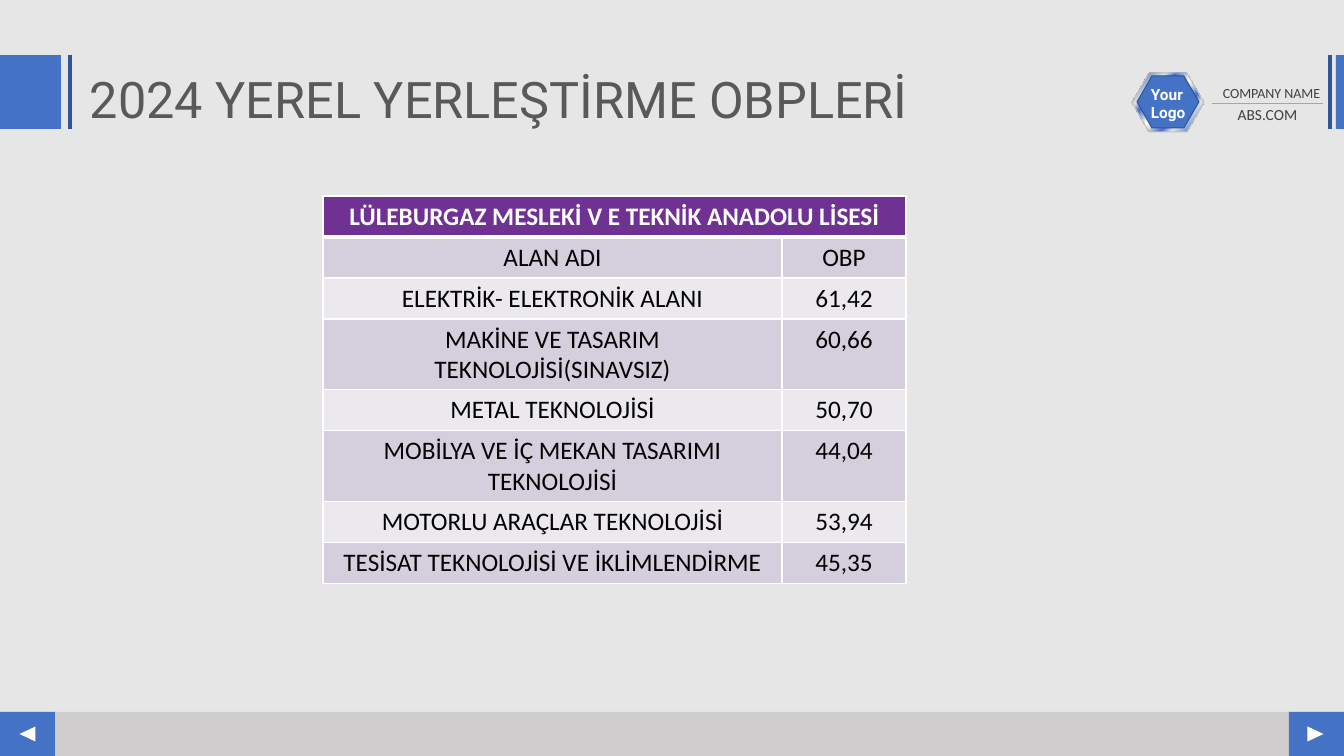
"""Build the slide listing the 2024 local placement OBP scores."""
import lxml.etree
import pptx
import pptx.dml.color
import pptx.enum.shapes
import pptx.enum.text
import pptx.oxml
import pptx.oxml.ns
import pptx.util

PX = 12192000 / 1344
BLUE, NAVY, WHITE, SILVER = "4472C4", "2F5597", "FFFFFF", "E6E6E6"
SHAPE = pptx.enum.shapes.MSO_SHAPE
ALIGN = pptx.enum.text.PP_ALIGN
FIT = pptx.enum.text.MSO_AUTO_SIZE
color = pptx.dml.color.RGBColor.from_string
qn = pptx.oxml.ns.qn

deck = pptx.Presentation()
deck.slide_width = round(1344 * PX)
deck.slide_height = round(756 * PX)
page = deck.slides.add_slide(deck.slide_layouts[6])
page.background.fill.solid()
page.background.fill.fore_color.rgb = color("E7E6E6")


def emu(*lengths):
    return [round(length * PX) for length in lengths]


def write(para, text, font, size, ink, bold=False):
    span = para.add_run()
    span.text = text
    span.font.name = font
    span.font.size = pptx.util.Pt(size)
    span.font.bold = bold
    span.font.color.rgb = color(ink)


for kind, bounds, fill, outline, turn in [
    (SHAPE.RECTANGLE, (0, 712, 1344, 44), "D0CECE", None, 0),
    (SHAPE.RECTANGLE, (1289, 712, 55, 44), BLUE, None, 0),
    (SHAPE.RECTANGLE, (0, 712, 55, 44), BLUE, None, 0),
    (SHAPE.ISOSCELES_TRIANGLE, (1308, 726, 15, 16), WHITE, None, 90),
    (SHAPE.ISOSCELES_TRIANGLE, (20, 726, 15, 16), WHITE, None, 270),
    (SHAPE.RECTANGLE, (1336, 55, 8, 74), BLUE, None, 0),
    (SHAPE.RECTANGLE, (0, 55, 61, 74), BLUE, None, 0),
    (SHAPE.HEXAGON, (1132, 73, 72, 59), None, "C0C0C0", 0),
    (SHAPE.HEXAGON, (1137, 76, 62, 52), BLUE, NAVY, 0),
]:
    shape = page.shapes.add_shape(kind, *emu(*bounds))
    shape.shadow.inherit = False
    shape.rotation = turn
    if kind == SHAPE.HEXAGON:
        shape.adjustments[0] = 0.29
    if fill:
        shape.fill.solid()
        shape.fill.fore_color.rgb = color(fill)
    else:
        shape.fill.gradient()
        gradient = shape.element.spPr.find(qn("a:gradFill"))
        stops = gradient.find(qn("a:gsLst"))
        for stop in list(stops):
            stops.remove(stop)
        for place, tint in [(0, SILVER), (8, BLUE), (26, SILVER), (34, BLUE),
                            (46, SILVER), (50, WHITE), (54, SILVER), (66, BLUE),
                            (74, SILVER), (92, BLUE), (100, SILVER)]:
            stop = lxml.etree.SubElement(stops, qn("a:gs"), pos=str(place * 1000))
            lxml.etree.SubElement(stop, qn("a:srgbClr"), val=tint)
        gradient.find(qn("a:lin")).set("ang", str(45 * 60000))
    if outline:
        shape.line.color.rgb = color(outline)
        shape.line.width = pptx.util.Pt(0.75)
    else:
        shape.line.fill.background()

for ends, ink, width in [
    ((1330, 55, 1330, 129), NAVY, 2.25),
    ((70, 55, 70, 129), NAVY, 2.25),
    ((1212, 103, 1323, 103), "A6A6A6", 0.5),
]:
    rule = page.shapes.add_connector(
        pptx.enum.shapes.MSO_CONNECTOR.STRAIGHT, *emu(*ends))
    rule.line.color.rgb = color(ink)
    rule.line.width = pptx.util.Pt(width)
    lxml.etree.SubElement(rule.element.spPr, qn("a:effectLst"))

for text, bounds, font, size, ink, bold, align, spacing, fit in [
    ("COMPANY NAME", (1212, 80, 119, 27), "Calibri", 10, "404040", False,
     ALIGN.CENTER, 1.0, FIT.SHAPE_TO_FIT_TEXT),
    ("ABS.COM", (1212, 100, 111, 29), "Calibri", 11, "404040", False,
     ALIGN.CENTER, 1.0, FIT.SHAPE_TO_FIT_TEXT),
    ("Your Logo", (1141, 80, 55, 47), "Roboto", 11, WHITE, True,
     ALIGN.LEFT, 1.0, FIT.SHAPE_TO_FIT_TEXT),
    ("2024 YEREL YERLEŞTİRME OBPLERİ", (80, 70, 1264, 88), "Roboto", 36,
     "595959", False, ALIGN.LEFT, 0.9, FIT.NONE),
]:
    box = page.shapes.add_textbox(*emu(*bounds))
    box.text_frame.word_wrap = True
    box.text_frame.auto_size = fit
    para = box.text_frame.paragraphs[0]
    para.alignment = align
    para.line_spacing = spacing
    write(para, text, font, size, ink, bold)

scores = [
    ("LÜLEBURGAZ MESLEKİ V E TEKNİK ANADOLU LİSESİ", ""),
    ("ALAN ADI", "OBP"),
    ("ELEKTRİK- ELEKTRONİK ALANI", "61,42"),
    ("MAKİNE VE TASARIM TEKNOLOJİSİ(SINAVSIZ)", "60,66"),
    ("METAL TEKNOLOJİSİ", "50,70"),
    ("MOBİLYA VE İÇ MEKAN TASARIMI TEKNOLOJİSİ", "44,04"),
    ("MOTORLU ARAÇLAR TEKNOLOJİSİ", "53,94"),
    ("TESİSAT TEKNOLOJİSİ VE İKLİMLENDİRME", "45,35"),
]
frame = page.shapes.add_table(len(scores), 2, *emu(323, 196, 583, 386))
table = frame.table
table.columns[0].width, table.columns[1].width = emu(459, 124)
table.cell(0, 0).merge(table.cell(0, 1))
for row, texts in enumerate(scores):
    table.rows[row].height = round(41 * PX)
    header = row == 0
    fill = "6F3293" if header else ("EBE8EE", "D5CEDC")[row % 2]
    for column, text in enumerate(texts):
        cell = table.cell(row, column)
        properties = cell._tc.get_or_add_tcPr()
        for side in "LRTB":
            heavy = (row, side) in [(0, "B"), (1, "T")]
            border = lxml.etree.SubElement(
                properties, qn(f"a:ln{side}"), w=str(pptx.util.Pt(3 if heavy else 1)))
            solid = lxml.etree.SubElement(border, qn("a:solidFill"))
            lxml.etree.SubElement(solid, qn("a:srgbClr"), val=WHITE)
        cell.fill.solid()
        cell.fill.fore_color.rgb = color(fill)
        if text:
            para = cell.text_frame.paragraphs[0]
            para.alignment = ALIGN.CENTER
            write(para, text, "Calibri", 18, WHITE if header else "000000", header)
frame.height = round(386 * PX)

deck.save("out.pptx")
